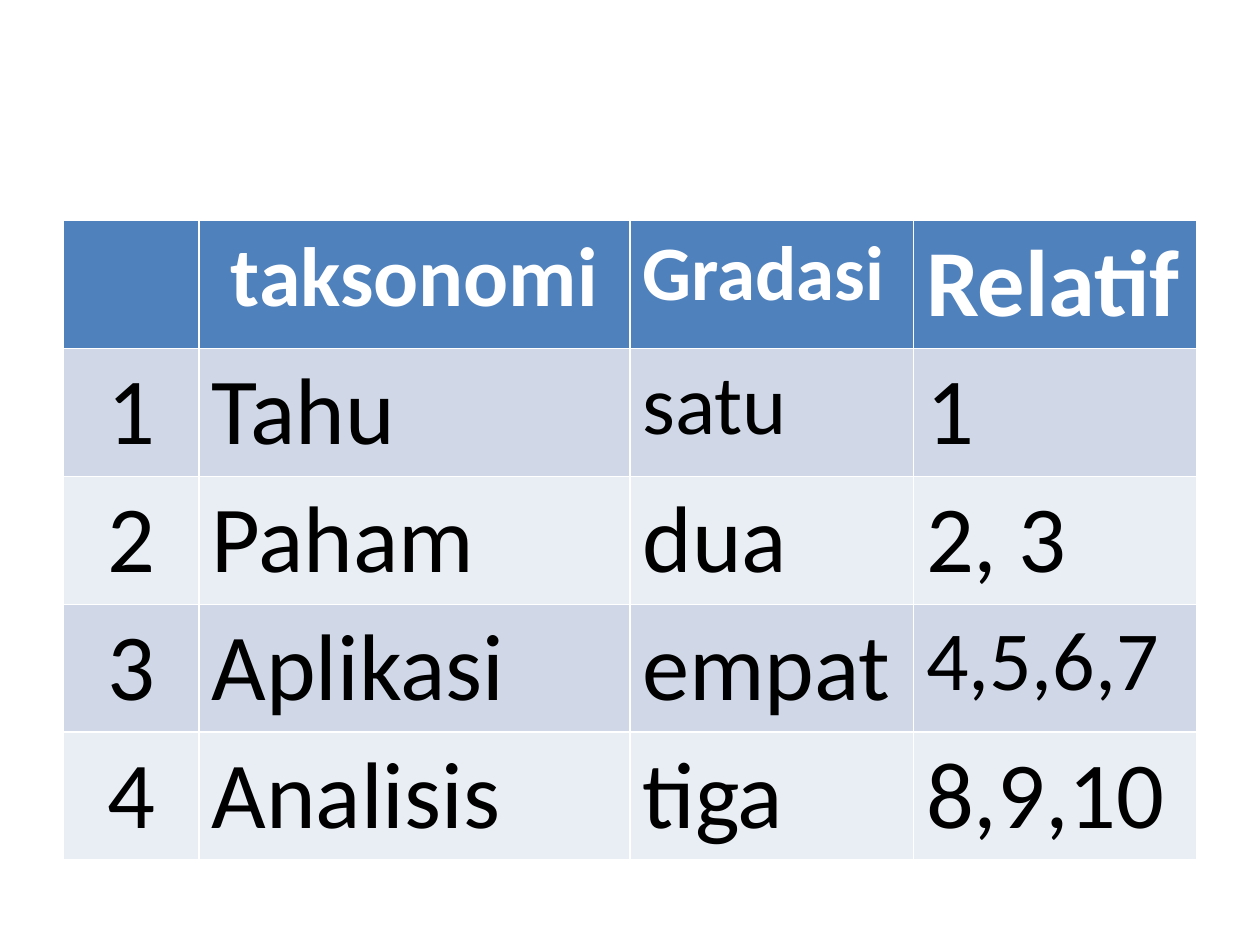
from pptx import Presentation
from pptx.dml.color import RGBColor as RGB
from pptx.enum.text import PP_ALIGN as ALIGN
from pptx.util import Inches, Pt

COLORS = {
    "header": "4F81BD",
    "odd": "D0D8E8",
    "even": "E9EDF4",
    "header_text": "FFFFFF",
    "text": "000000",
}
ROWS = [
    ["", "taksonomi", "Gradasi", "Relatif"],
    ["1", "Tahu", "satu", "1"],
    ["2", "Paham", "dua", "2, 3"],
    ["3", "Aplikasi", "empat", "4,5,6,7"],
    ["4", "Analisis", "tiga", "8,9,10"],
]
WIDTHS = [1.08, 3.42, 2.25, 2.25]
ROW_HEIGHT = 1.01
BASE_SIZE = 54
SMALLER = {"taksonomi": 48, "Gradasi": 44, "satu": 48, "4,5,6,7": 48}

prs = Presentation()
prs.slide_width, prs.slide_height = Inches(10), Inches(7.5)
slide = prs.slides.add_slide(prs.slide_layouts[6])

taxonomy = slide.shapes.add_table(
    len(ROWS), len(WIDTHS), Inches(0.5), Inches(1.75),
    Inches(sum(WIDTHS)), Inches(ROW_HEIGHT * len(ROWS)),
).table
for column, width in zip(taxonomy.columns, WIDTHS):
    column.width = Inches(width)

for r, entries in enumerate(ROWS):
    taxonomy.rows[r].height = Inches(ROW_HEIGHT)
    band = "header" if r == 0 else "odd" if r % 2 else "even"
    for c, entry in enumerate(entries):
        cell = taxonomy.cell(r, c)
        cell.fill.solid()
        cell.fill.fore_color.rgb = RGB.from_string(COLORS[band])
        if not entry:
            continue
        line = cell.text_frame.paragraphs[0]
        centred = c == 0 or entry == "taksonomi"
        line.alignment = ALIGN.CENTER if centred else ALIGN.LEFT
        run = line.add_run()
        run.text = entry
        run.font.name = "Calibri"
        run.font.size = Pt(SMALLER.get(entry, BASE_SIZE))
        run.font.bold = r == 0
        run.font.color.rgb = RGB.from_string(COLORS["text" if r else "header_text"])

prs.save("out.pptx")
